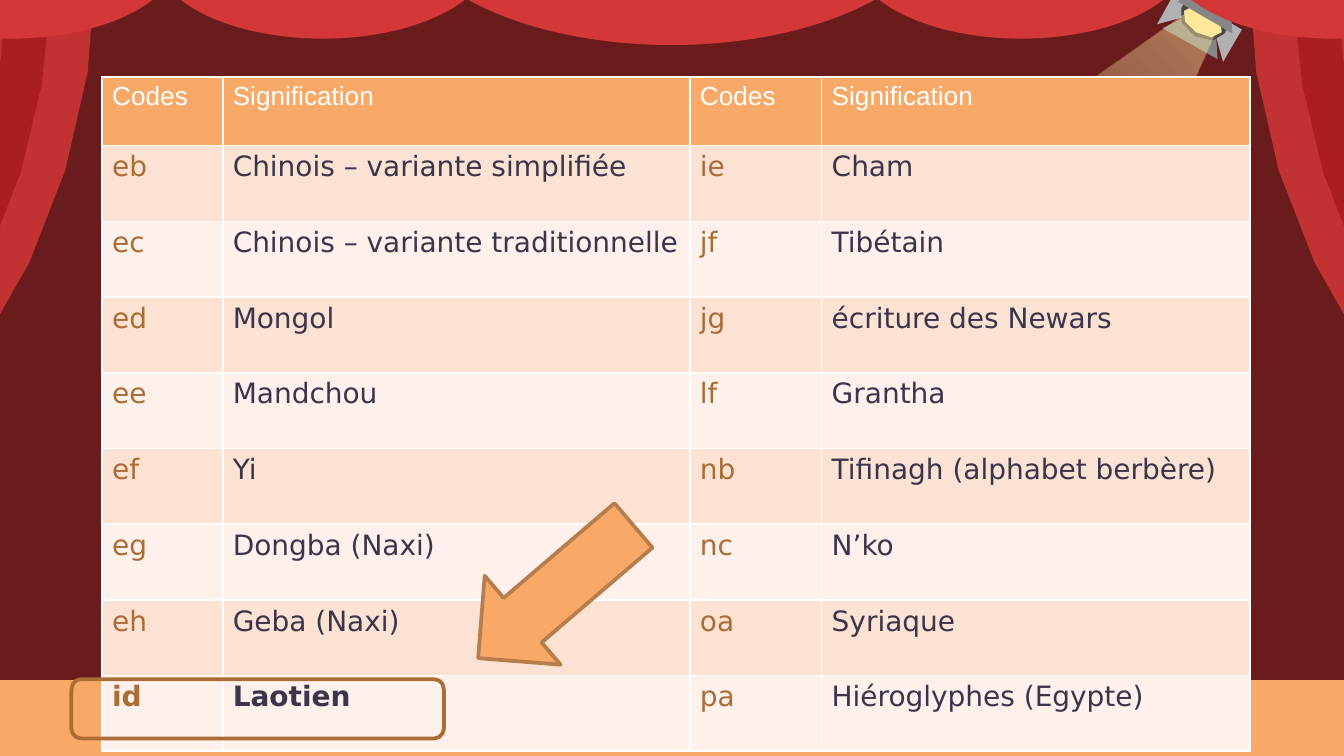
import pptx
import pptx.util
import pptx.dml.color
import pptx.enum.shapes
import pptx.oxml
import pptx.oxml.ns
import lxml.etree

Cm = pptx.util.Cm
Pt = pptx.util.Pt
kinds = pptx.enum.shapes.MSO_SHAPE
INCH = 2.54

hues = {
    "wall": "6A1C1C", "drape": "C23233", "fold": "AB1E1E", "swag": "D33738",
    "stage": "F8A967", "light": "B1B1B1", "mid": "868686", "dark": "474747",
    "glow": "FFE89A", "haze": "FFF4CD", "white": "FFFFFF", "code": "AC6C36",
    "text": "39354D", "odd": "FCE2D3", "even": "FEF1EB", "edge": "B77D4C",
}


def color(name):
    return pptx.dml.color.RGBColor.from_string(hues[name])


def draw(hue, start, *steps):
    """Fill an outline given in inches: 2 numbers are a line, 6 a Bezier curve."""
    spots = [start]
    for step in steps:
        if len(step) == 2:
            spots.append(step)
            continue
        knots = [spots[-1], step[:2], step[2:4], step[4:]]
        parts = 7 if abs(step[5] - knots[0][1]) > 1 else 2
        for i in range(1, parts + 1):
            t = i / parts
            mix = [(1 - t) ** 3, 3 * t * (1 - t) ** 2, 3 * t * t * (1 - t), t ** 3]
            spots.append(tuple(sum(m * k[a] for m, k in zip(mix, knots)) for a in (0, 1)))
    spots = [(Cm(x * INCH), Cm(y * INCH)) for x, y in spots]
    pen = slide.shapes.build_freeform(*spots[0])
    pen.add_line_segments(spots[1:], close=True)
    shape = pen.convert_to_shape()
    shape.shadow.inherit = False
    shape.fill.solid()
    shape.fill.fore_color.rgb = color(hue)
    shape.line.fill.background()
    return shape


deck = pptx.Presentation()
deck.slide_width, deck.slide_height = Cm(25.4), Cm(14.28)
slide = deck.slides.add_slide(deck.slide_layouts[6])
slide.background.fill.solid()
slide.background.fill.fore_color.rgb = color("wall")

# Spotlight, from back to front
draw("light", (9.12, 0.15), (9.24, 0.22), (9.1, 0.46), (9.05, 0.28))
draw("light", (8.75, -0.07), (8.87, 0), (8.8, 0.13), (8.61, 0.18))
draw("light", (9.3, 0.07), (9.47, 0.16), (9.44, 0.21), (9.27, 0.11))
draw("light", (9, 0.01), (9.04, 0), (9.27, 0.12), (9.28, 0.16), (9.24, 0.17), (9.02, 0.05))
draw("mid", (8.65, 0.21), (8.79, 0.14), (9.05, 0.29), (9.06, 0.44))
draw("dark", (8.97, -0.25), (9, -0.31, 9.1, -0.32, 9.2, -0.27),
     (9.29, -0.21, 9.33, -0.12, 9.3, -0.06), (9.11, 0.25),
     (9.08, 0.31, 8.98, 0.32, 8.89, 0.27), (8.8, 0.22, 8.75, 0.12, 8.79, 0.06))
draw("glow", (8.81, 0.08), (8.84, 0.03, 8.92, 0.03, 9, 0.08),
     (9.07, 0.12, 9.12, 0.2, 9.09, 0.24), (9.06, 0.29, 8.98, 0.29, 8.9, 0.24),
     (8.83, 0.2, 8.78, 0.12, 8.81, 0.08))
draw("mid", (8.76, 0.01), (8.9, -0.05), (9.16, 0.09), (9.17, 0.25))
draw("light", (9.07, -0.11), (9.11, -0.12), (9.33, 0.01), (9.34, 0.04), (9.28, 0.16),
     (9.24, 0.17), (9.23, 0.13), (9.28, 0.04), (9.08, -0.07))

beam = draw("glow", (8.85, 0.08), (5.81, 2.22), (7.78, 3.1), (9.07, 0.19))
beam.fill.gradient()
beam.fill.gradient_angle = 225
for stop, hue, place in zip(beam.fill.gradient_stops, ("glow", "haze"), (0, 0.66)):
    stop.color.rgb = color(hue)
    stop.position = place
for tag, alpha in zip(beam._element.spPr.iter(pptx.oxml.ns.qn("a:srgbClr")), (48000, 0)):
    lxml.etree.SubElement(tag, pptx.oxml.ns.qn("a:alpha")).set("val", str(alpha))

# Curtains: the left one mirrors the right one
drapes = [
    ("drape", (11.69, -0.86), (11.69, 4.09), (10.25, 3.19, 9.29, 1.59, 9.29, -0.23),
     (9.29, -0.86)),
    ("fold", (9.62, -0.04), (9.72, 0.07, 9.84, 0.15, 9.97, 0.21),
     (10.08, 1.56, 10.73, 2.76, 11.69, 3.6), (11.69, 3.87),
     (10.48, 2.97, 9.68, 1.56, 9.62, -0.04)),
    ("drape", (11.69, -0.86), (11.69, 3.6), (10.62, 2.67, 9.95, 1.3, 9.95, -0.23),
     (9.95, -0.86)),
]
for flip in (False, True):
    for hue, *steps in drapes:
        if flip:
            steps = [tuple(v if i % 2 else 10 - v for i, v in enumerate(s)) for s in steps]
        draw(hue, *steps)

draw("stage", (-0.01, 5.06), (-0.01, 5.81), (10.02, 5.81), (10.02, 5.06))

# Swags are half discs turned down: centre, top and radius
for mid, top, size in ((25.2, -2.46, 3.19), (19.3, -2.46, 3.19), (0.2, -2.46, 3.19),
                       (6.1, -2.46, 3.19), (12.69, -4.32, 5.17)):
    swag = slide.shapes.add_shape(kinds.FLOWCHART_DELAY, Cm(mid - size / 2),
                                  Cm(top - size / 2), Cm(size), Cm(2 * size))
    swag.rotation = 90
    swag.shadow.inherit = False
    swag.fill.solid()
    swag.fill.fore_color.rgb = color("swag")
    swag.line.fill.background()

# Table of codes
rows = [
    ("Codes", "Signification", "Codes", "Signification"),
    ("eb", "Chinois – variante simplifiée", "ie", "Cham"),
    ("ec", "Chinois – variante traditionnelle", "jf", "Tibétain"),
    ("ed", "Mongol", "jg", "écriture des Newars"),
    ("ee", "Mandchou", "lf", "Grantha"),
    ("ef", "Yi", "nb", "Tifinagh (alphabet berbère)"),
    ("eg", "Dongba (Naxi)", "nc", "N’ko"),
    ("eh", "Geba (Naxi)", "oa", "Syriaque"),
    ("id", "Laotien", "pa", "Hiéroglyphes (Egypte)"),
]
table = slide.shapes.add_table(len(rows), 4, Cm(1.93), Cm(1.45), Cm(21.7), Cm(12.74)).table
for col, wide in zip(table.columns, (2.28, 8.83, 2.49, 8.1)):
    col.width = Cm(wide)
for r, row in enumerate(rows):
    table.rows[r].height = Cm(1.43 if r else 1.3)
    for c, words in enumerate(row):
        cell = table.cell(r, c)
        cell.margin_left = cell.margin_right = Cm(0.19)
        cell.margin_top = cell.margin_bottom = Cm(0.1)
        cell.text_frame.text = words
        font = cell.text_frame.paragraphs[0].runs[0].font
        font.name = "DejaVu Sans" if r else "Arial"
        font.size = Pt(15 if r else 14)
        font.bold = r == len(rows) - 1 and c < 2
        font.color.rgb = color(("text" if c % 2 else "code") if r else "white")
        props = cell._tc.get_or_add_tcPr()
        for side in ("lnL", "lnR", "lnT", "lnB"):
            props.append(pptx.oxml.parse_xml(
                f'<a:{side} {pptx.oxml.ns.nsdecls("a")} w="12700"><a:solidFill>'
                f'<a:srgbClr val="{hues["white"]}"/></a:solidFill></a:{side}>'))
        cell.fill.solid()
        cell.fill.fore_color.rgb = color(("odd" if r % 2 else "even") if r else "stage")

# Highlight of the Lao row
frame = slide.shapes.add_shape(kinds.ROUNDED_RECTANGLE, Cm(1.35), Cm(12.83), Cm(7.04), Cm(1.12))
frame.fill.background()
arrow = slide.shapes.add_shape(kinds.DOWN_ARROW, Cm(9.4), Cm(9.25), Cm(2.21), Cm(3.86))
arrow.rotation = 49.5
arrow.fill.solid()
arrow.fill.fore_color.rgb = color("stage")
for shape, hue in ((frame, "code"), (arrow, "edge")):
    shape.shadow.inherit = False
    shape.line.color.rgb = color(hue)
    shape.line.width = Pt(2)

deck.save("out.pptx")
